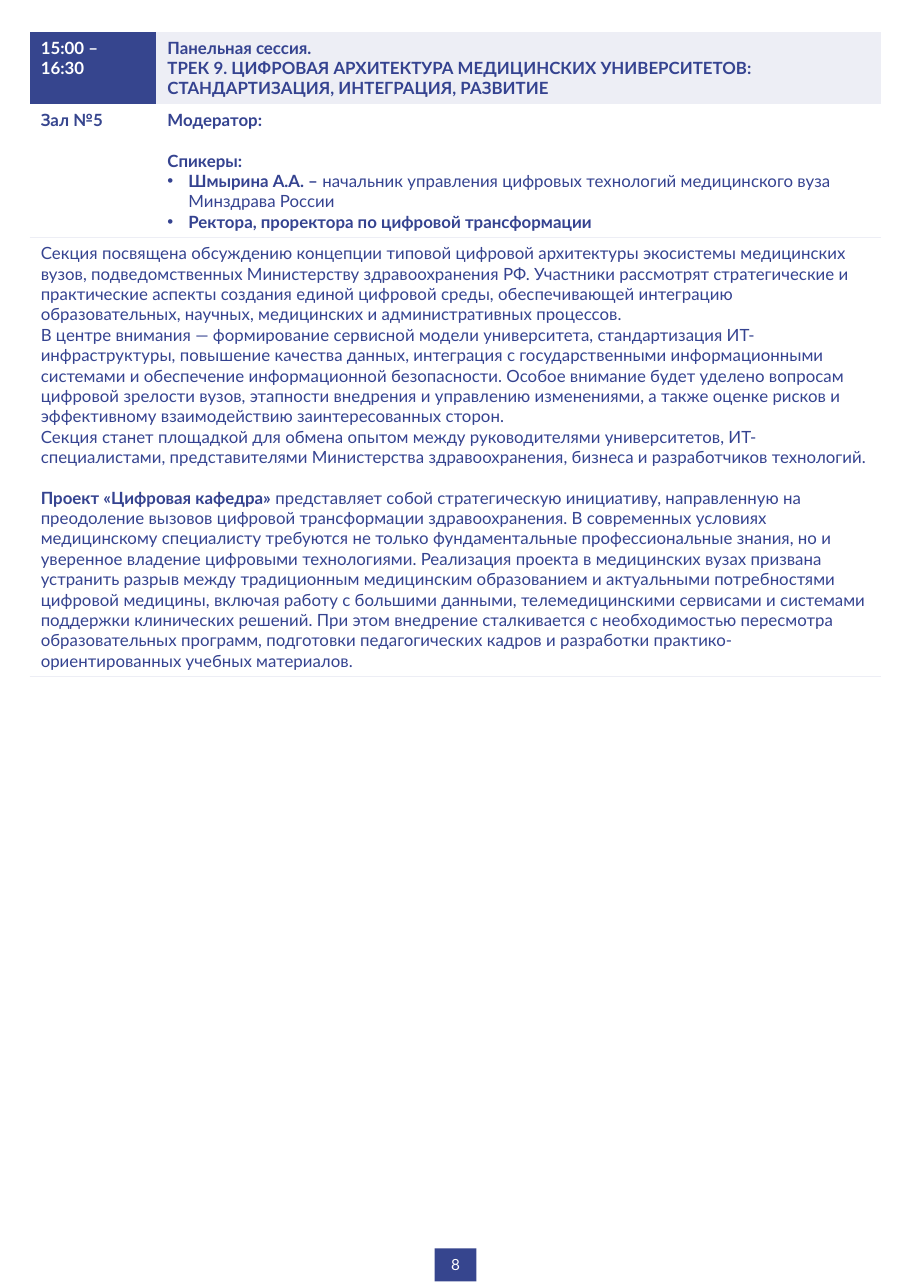
from dataclasses import dataclass, field

from lxml.etree import SubElement
from pptx import Presentation
from pptx.dml.color import RGBColor
from pptx.enum.shapes import MSO_SHAPE as Preset
from pptx.enum.text import MSO_ANCHOR as Anchor, PP_ALIGN as Align
from pptx.oxml.ns import qn
from pptx.table import _Cell as Cell
from pptx.text.text import _Paragraph as TextParagraph
from pptx.util import Emu, Inches, Pt

COLOURS = {"navy": "36458E", "ink": "354390", "pale": "EDEEF5", "white": "FFFFFF"}
FONT = "Lato"
TEXT_SIZE = 11
LINE_GAP = 13.2  # height of one text line, in points
SLIDE_WIDTH, SLIDE_HEIGHT = Inches(8.27), Inches(11.69)
BULLET_INDENT = Inches(0.19)


@dataclass
class Paragraph:
    """Text with a bold opening and a regular remainder."""
    bold: str = ""
    regular: str = ""
    bullet: bool = False
    gap_before: bool = False


@dataclass
class Entry:
    """One cell of the programme, with its rule widths in points."""
    row: int
    column: int
    fill: str
    colour: str
    paragraphs: list[Paragraph]
    rules: dict[str, float] = field(default_factory=dict)


def across(share: float) -> Emu:
    return Emu(round(SLIDE_WIDTH * share))


def down(share: float) -> Emu:
    return Emu(round(SLIDE_HEIGHT * share))


def rgb(name: str) -> RGBColor:
    return RGBColor.from_string(COLOURS[name])


def style(paragraph: TextParagraph, size: float, colour: str) -> None:
    paragraph.font.name = FONT
    paragraph.font.size = Pt(size)
    paragraph.font.color.rgb = rgb(colour)


def add_bullet(paragraph: TextParagraph) -> None:
    properties = paragraph._p.get_or_add_pPr()
    properties.set("marL", str(BULLET_INDENT))
    properties.set("indent", str(-BULLET_INDENT))
    bullet_font = properties.makeelement(qn("a:buFont"), {"typeface": "Arial"})
    bullet = properties.makeelement(qn("a:buChar"), {"char": "•"})
    properties.insert_element_before(bullet_font, "a:defRPr")
    properties.insert_element_before(bullet, "a:defRPr")


def set_rules(cell: Cell, rules: dict[str, float]) -> None:
    properties = cell._tc.get_or_add_tcPr()
    for position, side in enumerate("LRTB"):
        width = rules.get(side, 0)
        line = properties.makeelement(qn(f"a:ln{side}"), {"w": str(Pt(width))})
        if width:
            fill = SubElement(line, qn("a:solidFill"))
            SubElement(fill, qn("a:srgbClr"), val=COLOURS["pale"])
        else:
            SubElement(line, qn("a:noFill"))
        properties.insert(position, line)


def write_entry(cell: Cell, entry: Entry) -> None:
    cell.fill.solid()
    cell.fill.fore_color.rgb = rgb(entry.fill)
    set_rules(cell, entry.rules)
    frame = cell.text_frame
    for index, content in enumerate(entry.paragraphs):
        paragraph = frame.add_paragraph() if index else frame.paragraphs[0]
        style(paragraph, TEXT_SIZE, entry.colour)
        if content.gap_before:
            paragraph.space_before = Pt(LINE_GAP)
        if content.bullet:
            add_bullet(paragraph)
        paragraph.font.bold = not content.regular
        for text, is_bold in ((content.bold, True), (content.regular, False)):
            if text:
                run = paragraph.add_run()
                run.text = text
                if content.bold and content.regular:
                    run.font.bold = is_bold


# Programme content
PROGRAMME = [
    Entry(0, 0, "navy", "white", [Paragraph("15:00 – 16:30")]),
    Entry(0, 1, "pale", "ink", [
        Paragraph("Панельная сессия."),
        Paragraph("ТРЕК 9. ЦИФРОВАЯ АРХИТЕКТУРА МЕДИЦИНСКИХ УНИВЕРСИТЕТОВ:"),
        Paragraph("СТАНДАРТИЗАЦИЯ, ИНТЕГРАЦИЯ, РАЗВИТИЕ"),
    ]),
    Entry(1, 0, "white", "navy", [Paragraph("Зал №5")], {"B": 1}),
    Entry(1, 1, "white", "ink", [
        Paragraph("Модератор:"),
        Paragraph("Спикеры:", gap_before=True),
        Paragraph("Шмырина А.А. – ", "начальник управления цифровых технологий "
                  "медицинского вуза Минздрава России", bullet=True),
        Paragraph("Ректора, проректора по цифровой трансформации", bullet=True),
    ], {"B": 1}),
    Entry(2, 0, "white", "ink", [
        Paragraph(regular=(
            "Секция посвящена обсуждению концепции типовой цифровой архитектуры экосистемы "
            "медицинских вузов, подведомственных Министерству здравоохранения РФ. Участники "
            "рассмотрят стратегические и практические аспекты создания единой цифровой среды, "
            "обеспечивающей интеграцию образовательных, научных, медицинских и "
            "административных процессов.")),
        Paragraph(regular=(
            "В центре внимания — формирование сервисной модели университета, стандартизация "
            "ИТ-инфраструктуры, повышение качества данных, интеграция с государственными "
            "информационными системами и обеспечение информационной безопасности. Особое "
            "внимание будет уделено вопросам цифровой зрелости вузов, этапности внедрения и "
            "управлению изменениями, а также оценке рисков и эффективному взаимодействию "
            "заинтересованных сторон.")),
        Paragraph(regular=(
            "Секция станет площадкой для обмена опытом между руководителями университетов, "
            "ИТ-специалистами, представителями Министерства здравоохранения, бизнеса и "
            "разработчиков технологий.")),
        Paragraph("Проект «Цифровая кафедра» ", (
            "представляет собой стратегическую инициативу, направленную на преодоление вызовов "
            "цифровой трансформации здравоохранения. В современных условиях медицинскому "
            "специалисту требуются не только фундаментальные профессиональные знания, но и "
            "уверенное владение цифровыми технологиями. Реализация проекта в медицинских вузах "
            "призвана устранить разрыв между традиционным медицинским образованием и "
            "актуальными потребностями цифровой медицины, включая работу с большими данными, "
            "телемедицинскими сервисами и системами поддержки клинических решений. При этом "
            "внедрение сталкивается с необходимостью пересмотра образовательных программ, "
            "подготовки педагогических кадров и разработки практико-ориентированных учебных "
            "материалов."), gap_before=True),
    ], {"T": 1, "B": 0.5}),
]
COLUMN_INCHES = (1.15, 6.58)
ROW_INCHES = (0.65, 1.21, 3.98)


def main() -> None:
    presentation = Presentation()
    presentation.slide_width, presentation.slide_height = SLIDE_WIDTH, SLIDE_HEIGHT
    slide = presentation.slides.add_slide(presentation.slide_layouts[6])

    # Page number
    number_width = Inches(0.38)
    page_number = slide.shapes.add_shape(
        Preset.RECTANGLE, across(0.5) - number_width // 2, down(1) - Inches(0.36),
        number_width, Inches(0.3))
    page_number.shadow.inherit = False
    page_number.fill.solid()
    page_number.fill.fore_color.rgb = rgb("navy")
    page_number.line.fill.background()
    number_frame = page_number.text_frame
    number_frame.vertical_anchor = Anchor.MIDDLE
    number_frame.text = "8"
    number_frame.paragraphs[0].alignment = Align.CENTER
    style(number_frame.paragraphs[0], 10, "white")

    # Session programme
    programme = slide.shapes.add_table(
        len(ROW_INCHES), len(COLUMN_INCHES), Inches(0.27), Inches(0.29),
        Inches(sum(COLUMN_INCHES)), Inches(sum(ROW_INCHES))).table
    programme.first_row = programme.horz_banding = False
    for column, width in zip(programme.columns, COLUMN_INCHES):
        column.width = Inches(width)
    for row, height in zip(programme.rows, ROW_INCHES):
        row.height = Inches(height)
    programme.cell(2, 0).merge(programme.cell(2, 1))
    for entry in PROGRAMME:
        write_entry(programme.cell(entry.row, entry.column), entry)

    presentation.save("out.pptx")


if __name__ == "__main__":
    main()
